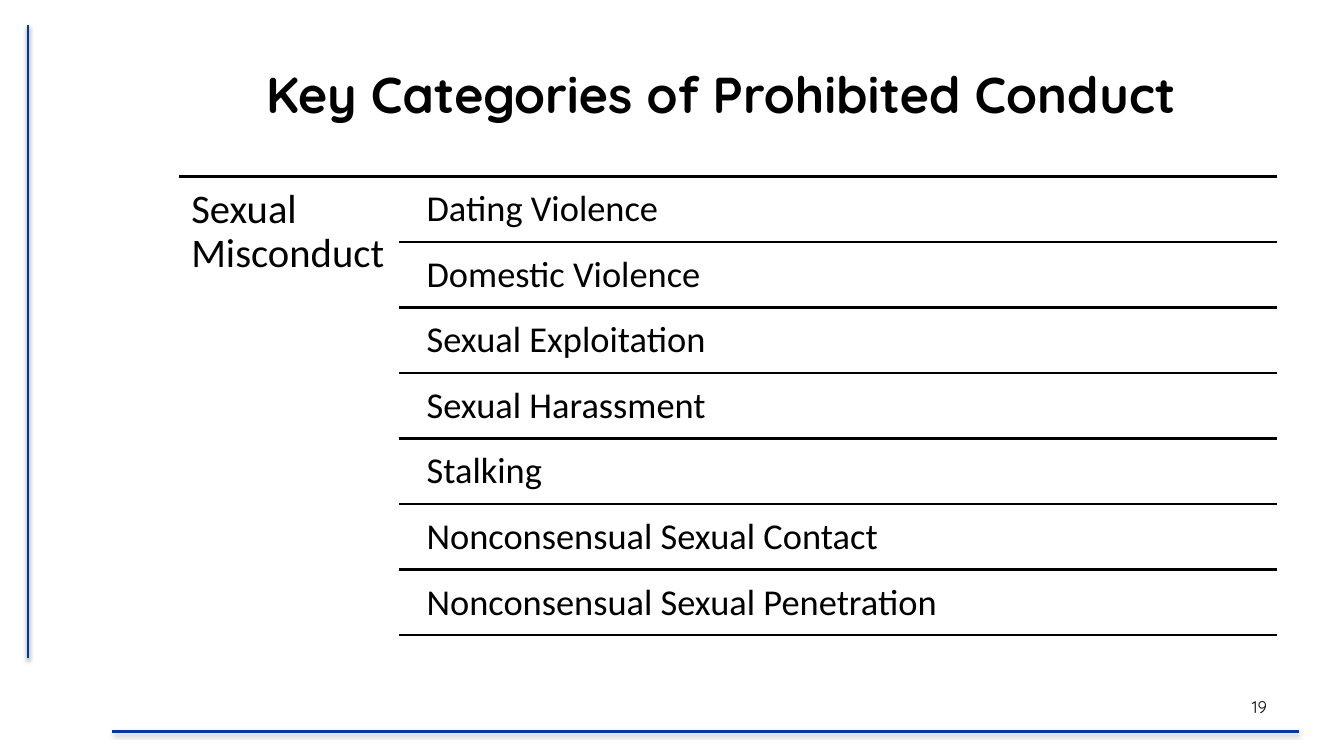
import pptx
import pptx.util
import pptx.dml.color
import pptx.enum.shapes
import pptx.enum.text
import pptx.oxml
import pptx.oxml.ns

BLACK = pptx.dml.color.RGBColor(0x00, 0x00, 0x00)
BLUE = pptx.dml.color.RGBColor(0x00, 0x38, 0xA8)
ALIGN = pptx.enum.text.PP_ALIGN
ANCHOR = pptx.enum.text.MSO_ANCHOR

COLS, ROWS = 120, 75
LEFT, SPLIT, RIGHT = 16, 35.65, 114
TOP, STEP = 17.5, 6.5
INDENT, DROP = 1.45, 0.3

KINDS = [
    "Dating Violence",
    "Domestic Violence",
    "Sexual Exploitation",
    "Sexual Harassment",
    "Stalking",
    "Nonconsensual Sexual Contact",
    "Nonconsensual Sexual Penetration",
]

SHADOW = (
    '<a:outerShdw blurRad="39400" dist="20300" dir="5400000" rotWithShape="0">'
    '<a:srgbClr val="000000"><a:alpha val="38000"/></a:srgbClr></a:outerShdw>'
)


class Page:
    """Places elements on a slide grid of COLS columns by ROWS rows."""

    head = "Quicksand"
    body = "Calibri"

    def __init__(self, deck):
        self.wide = deck.slide_width
        self.high = deck.slide_height
        self.slide = deck.slides.add_slide(deck.slide_layouts[5])

    def spot(self, col, row):
        return round(self.wide * col / COLS), round(self.high * row / ROWS)

    def rule(self, start, end, color=BLACK, effect=""):
        line = self.slide.shapes.add_connector(
            pptx.enum.shapes.MSO_CONNECTOR.STRAIGHT,
            *self.spot(*start), *self.spot(*end))
        line.line.color.rgb = color
        line.line.width = pptx.util.Pt(2)
        line._element.spPr.append(pptx.oxml.parse_xml(
            f'<a:effectLst {pptx.oxml.ns.nsdecls("a")}>{effect}</a:effectLst>'))

    def fill(self, shape, words, size, font, align=ALIGN.LEFT,
             anchor=ANCHOR.TOP, inset=0.1, space=1.0, bold=False):
        """Format a shape's text frame and write one run into it."""
        frame = shape.text_frame
        frame.word_wrap = True
        frame.auto_size = pptx.enum.text.MSO_AUTO_SIZE.NONE
        frame.vertical_anchor = anchor
        frame.margin_left = frame.margin_right = pptx.util.Inches(inset)
        frame.margin_top = frame.margin_bottom = pptx.util.Inches(inset)
        para = frame.paragraphs[0]
        para.alignment = align
        para.line_spacing = space
        run = para.add_run()
        run.text = words
        run.font.name = font
        run.font.size = pptx.util.Pt(size)
        run.font.bold = bold
        run.font.color.rgb = BLACK

    def title(self, words, col, row, width, height):
        shape = self.slide.shapes.title
        shape.left, shape.top = self.spot(col, row)
        shape.width, shape.height = self.spot(width, height)
        self.fill(shape, words, 36, self.head, ALIGN.CENTER,
                  ANCHOR.MIDDLE, bold=True)

    def text(self, words, col, row, width, height, size, font, **style):
        box = self.slide.shapes.add_textbox(
            *self.spot(col, row), *self.spot(width, height))
        self.fill(box, words, size, font, **style)


def main():
    deck = pptx.Presentation()
    deck.slide_width = pptx.util.Inches(13.33)
    deck.slide_height = pptx.util.Inches(7.5)
    page = Page(deck)

    page.rule((2.5, 65.3), (2.5, 2.5), BLUE, SHADOW)
    page.rule((10, 72.6), (116, 72.6), BLUE, SHADOW)
    page.title("Key Categories of Prohibited Conduct ",
               LEFT, 3, RIGHT - LEFT, 12.5)
    page.text("19", 106.75, 68.1, RIGHT - 106.75, 4, 12, page.head,
              align=ALIGN.RIGHT, anchor=ANCHOR.MIDDLE)

    page.rule((LEFT, TOP), (RIGHT, TOP))
    page.text("Sexual Misconduct", LEFT, TOP, SPLIT - LEFT, STEP * len(KINDS),
              29, page.body, inset=0.12, space=0.9)
    for num, kind in enumerate(KINDS):
        row = TOP + num * STEP
        page.text(kind, SPLIT + INDENT, row + DROP, RIGHT - SPLIT - INDENT,
                  STEP - DROP, 26, page.body, inset=0.11, space=0.9)
        page.rule((SPLIT, row + STEP), (RIGHT, row + STEP))

    deck.save("out.pptx")


if __name__ == "__main__":
    main()
